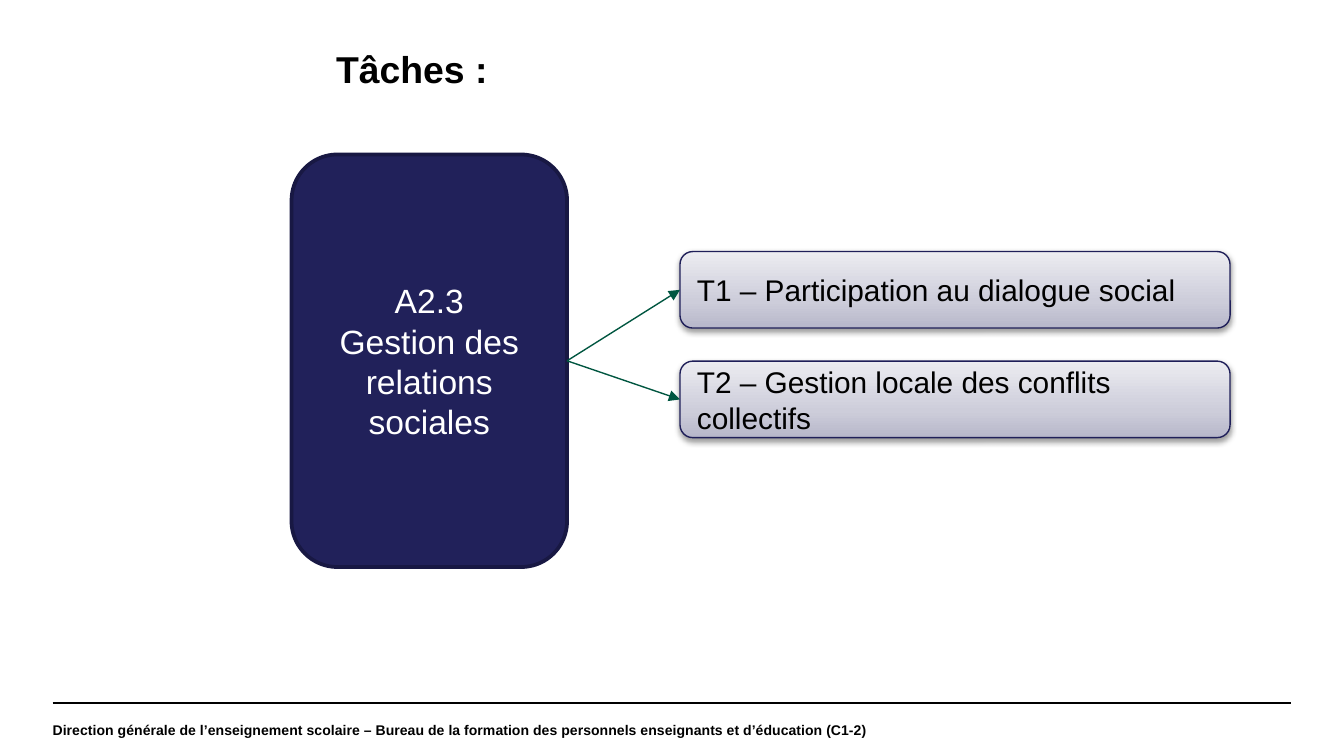
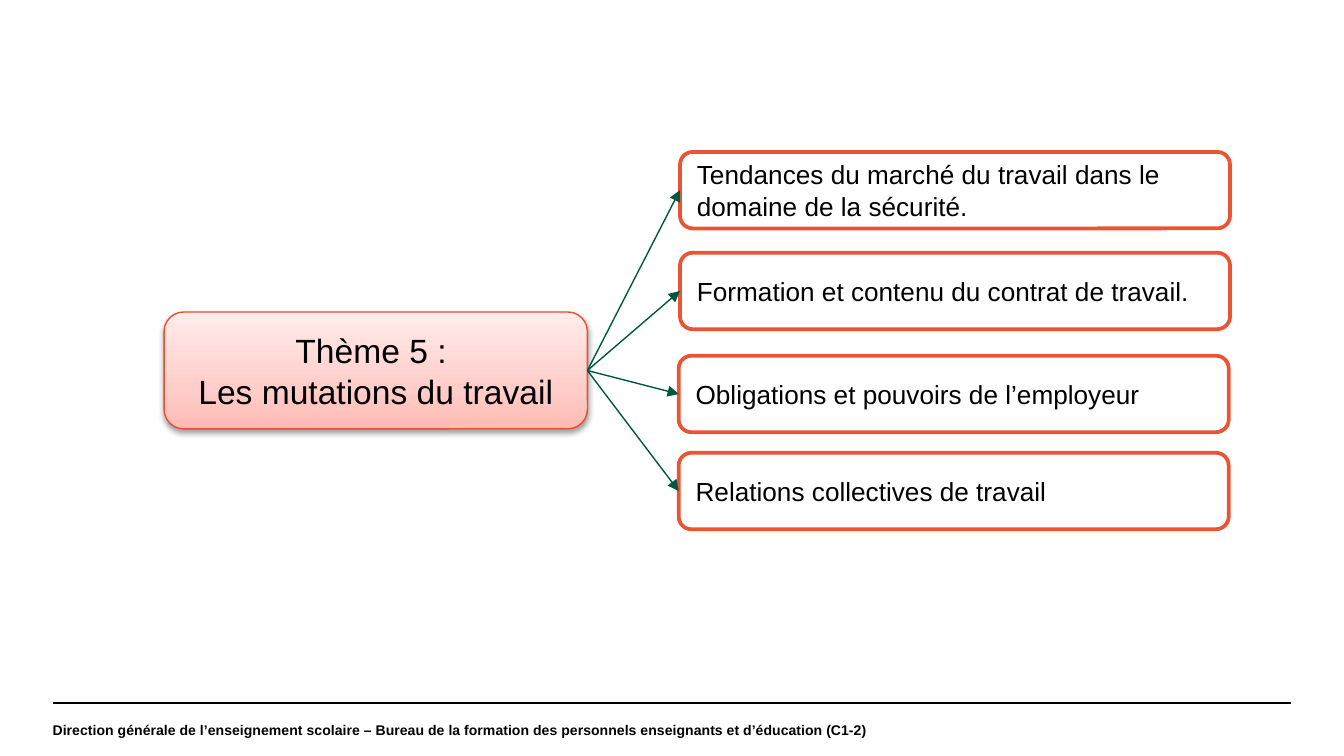
import pptx
import copy
import pptx.util
import pptx.dml.color
import pptx.enum.shapes
import pptx.enum.text
import pptx.oxml
import pptx.oxml.ns
import lxml.etree

Pt = pptx.util.Pt
RGB = pptx.dml.color.RGBColor.from_string
qn = pptx.oxml.ns.qn
ALIGN = pptx.enum.text.PP_ALIGN
ANCHOR = pptx.enum.text.MSO_ANCHOR
SHAPE = pptx.enum.shapes.MSO_SHAPE.ROUNDED_RECTANGLE
STRAIGHT = pptx.enum.shapes.MSO_CONNECTOR.STRAIGHT

FONT = "Arial"
COLORS = {
    "black": "000000", "white": "FFFFFF", "arrow": "005640",
    "navy": "21215A", "edge": "181843", "rim": "1F1F59",
    "red": "E94F2D", "orange": "EA5433",
}
GREYS = ["B7B7CA", "CDCDDA", "ECECF1"]
PINKS = ["FFBAB4", "FFCECA", "FFECEB"]
FOOTER = ("Direction générale de l’enseignement scolaire – Bureau de la "
          "formation des personnels enseignants et d’éducation (C1-2)")
SHADOW = (
    '<a:outerShdw xmlns:a="http://schemas.openxmlformats.org/drawingml/2006/main" '
    'blurRad="40000" dist="20000" dir="5400000" rotWithShape="0">'
    '<a:srgbClr val="000000"><a:alpha val="38000"/></a:srgbClr></a:outerShdw>')


def write(shape, text, size, color="black", bold=False, align=ALIGN.LEFT,
          anchor=ANCHOR.MIDDLE):
    frame = shape.text_frame
    frame.text = text
    frame.word_wrap = True
    frame.auto_size = pptx.enum.text.MSO_AUTO_SIZE.NONE
    frame.vertical_anchor = anchor
    for para in frame.paragraphs:
        para.alignment = align
        for run in para.runs:
            run.font.name = FONT
            run.font.size = Pt(size)
            run.font.bold = bold
            run.font.color.rgb = RGB(COLORS[color])


def add_box(slide, place, fill, edge, weight):
    """Add a rounded box; a list as fill makes a shaded box with a shadow."""
    box = slide.shapes.add_shape(SHAPE, *[Pt(n) for n in place])
    box.shadow.inherit = False
    if isinstance(fill, list):
        box.fill.gradient()
        box.fill.gradient_angle = 90
        stops = box.element.spPr.find(".//" + qn("a:gsLst"))
        stops.insert(1, copy.deepcopy(stops[0]))
        for stop, spot, color in zip(box.fill.gradient_stops, (0, 0.35, 1), fill):
            stop.position = spot
            stop.color.rgb = RGB(color)
        effects = box.element.spPr.find(qn("a:effectLst"))
        effects.append(pptx.oxml.parse_xml(SHADOW))
    else:
        box.fill.solid()
        box.fill.fore_color.rgb = RGB(COLORS[fill])
    box.line.color.rgb = RGB(COLORS[edge])
    box.line.width = Pt(weight)
    return box


PAGES = [
    {
        "title": "Tâches :",
        "hub": "A2.3\nGestion des relations sociales",
        "place": (156.2, 82.8, 147.6, 221),
        "color": "white",
        "look": ("navy", "edge", 2),
        "leaf": (GREYS, "rim", 0.75),
        "size": 16,
        "items": [
            (364.3, 134.8, "T1 – Participation au dialogue social"),
            (364.3, 193.5, "T2 – Gestion locale des conflits collectifs"),
        ],
    },
    {
        "title": None,
        "hub": "Thème 5 : \nLes mutations du travail",
        "place": (87.9, 167.2, 226.8, 62.6),
        "color": "black",
        "look": (PINKS, "red", 0.75),
        "leaf": ("white", "orange", 2),
        "size": 14,
        "items": [
            (364.3, 81.4, "Tendances du marché du travail dans le domaine de la sécurité."),
            (364.3, 135.4, "Formation et contenu du contrat de travail."),
            (363.6, 190.6, "Obligations et pouvoirs de l’employeur"),
            (363.6, 242.6, "Relations collectives de travail"),
        ],
    },
]

deck = pptx.Presentation()
deck.slide_width, deck.slide_height = Pt(720), Pt(405)

for page in PAGES:
    slide = deck.slides.add_slide(deck.slide_layouts[5 if page["title"] else 6])
    lines = []

    rule = slide.shapes.add_connector(STRAIGHT, Pt(28.2), Pt(376.6), Pt(691.8), Pt(376.6))
    lines.append((rule, "black", 0.8))
    footer = slide.shapes.add_textbox(Pt(28.2), Pt(376.8), Pt(672), Pt(28.2))
    write(footer, FOOTER, 7.5, bold=True)
    frame = footer.text_frame
    frame.margin_left = frame.margin_right = frame.margin_top = frame.margin_bottom = 0

    if page["title"]:
        title = slide.shapes.title
        title.left, title.top = Pt(172.8), Pt(20.9)
        title.width, title.height = Pt(396.7), Pt(31.7)
        write(title, page["title"], 20, bold=True, anchor=ANCHOR.TOP)

    hub = add_box(slide, page["place"], *page["look"])
    write(hub, page["hub"], 18, page["color"], align=ALIGN.CENTER)

    for left, top, text in page["items"]:
        leaf = add_box(slide, (left, top, 294.7, 41), *page["leaf"])
        write(leaf, text, page["size"])
        arrow = slide.shapes.add_connector(STRAIGHT, 0, 0, 0, 0)
        arrow.begin_connect(hub, 3)
        arrow.end_connect(leaf, 1)
        lines.append((arrow, "arrow", 0.75))

    for line, color, weight in lines:
        line.line.color.rgb = RGB(COLORS[color])
        line.line.width = Pt(weight)
        props = line.element.spPr
        if color == "arrow":
            stroke = props.find(qn("a:ln"))
            lxml.etree.SubElement(stroke, qn("a:tailEnd"), type="triangle")
        lxml.etree.SubElement(props, qn("a:effectLst"))

deck.save("out.pptx")
